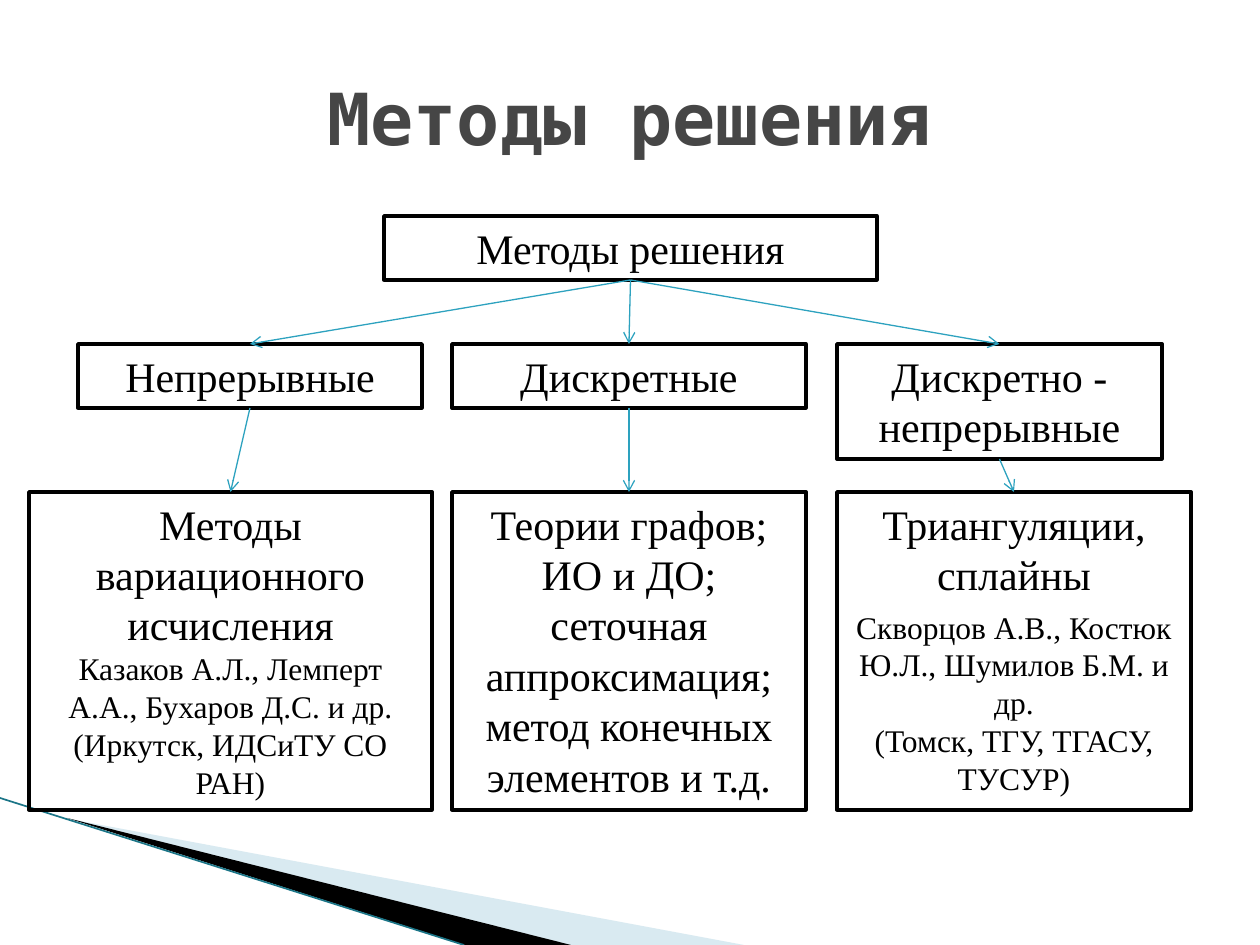
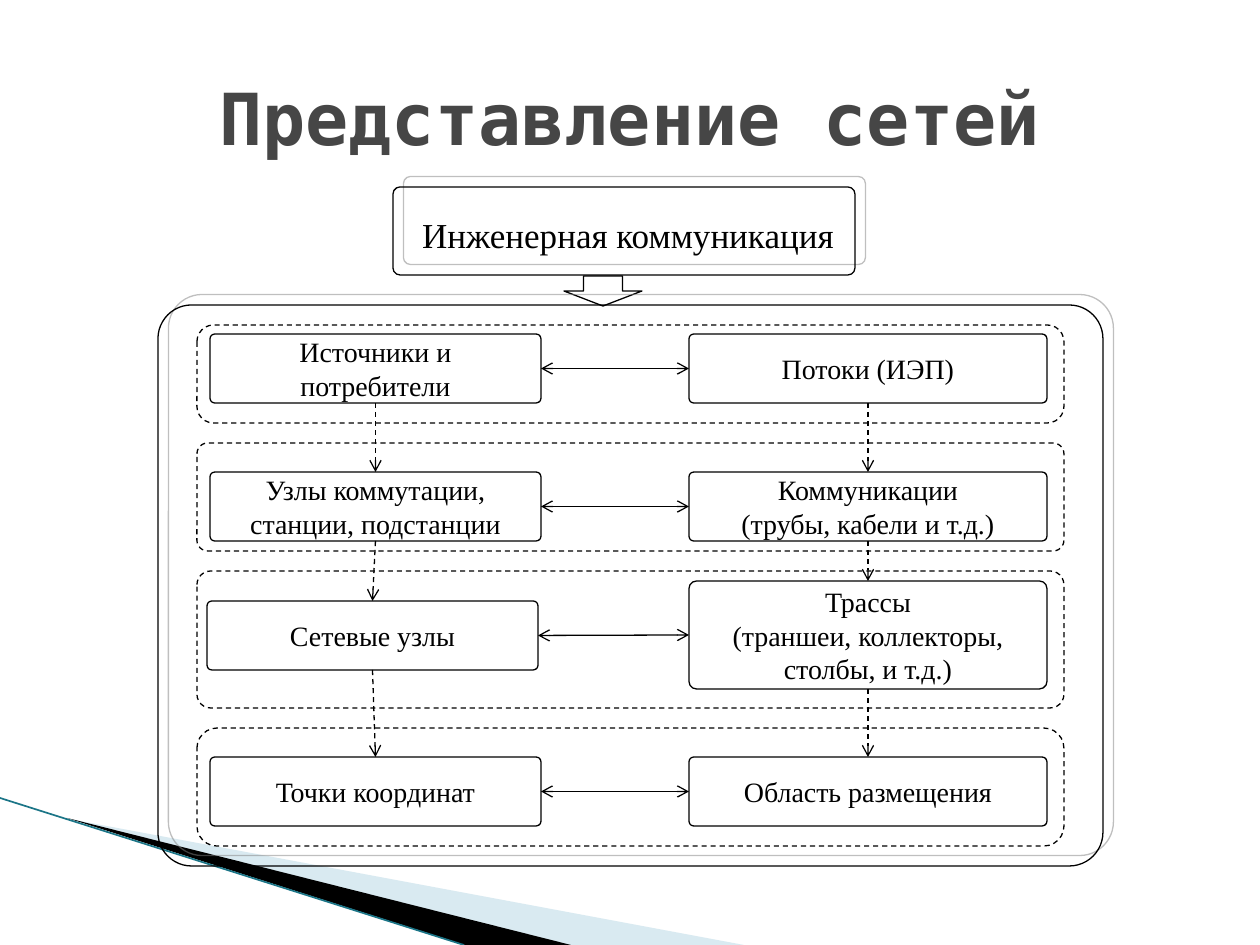
from lxml.etree import SubElement
from pptx import Presentation
from pptx.dml.color import RGBColor
from pptx.enum.dml import MSO_LINE
from pptx.enum.shapes import MSO_CONNECTOR, MSO_SHAPE
from pptx.enum.text import MSO_ANCHOR, PP_ALIGN
from pptx.oxml.ns import qn
from pptx.util import Pt

UNIT = 914400 / 126
WIDE, HIGH = 1260, 945
BLACK = RGBColor(0x00, 0x00, 0x00)
GRAY = RGBColor(0x46, 0x46, 0x46)
PALE = RGBColor(0xA0, 0xCB, 0xDC)
TEAL = RGBColor(0x1B, 0x75, 0x87)
CYAN = RGBColor(0x2D, 0xA2, 0xBF)
SERIF = "Times New Roman"
MONO = "DejaVu Sans Mono"
RECT = MSO_SHAPE.RECTANGLE
ROUND = MSO_SHAPE.ROUNDED_RECTANGLE
DOWN = MSO_SHAPE.DOWN_ARROW
STRAIGHT = MSO_CONNECTOR.STRAIGHT
DASH = MSO_LINE.DASH
TOP, MIDDLE = MSO_ANCHOR.TOP, MSO_ANCHOR.MIDDLE
CENTER = PP_ALIGN.CENTER
NORTH, WEST, SOUTH, EAST = range(4)

TREE = [
    ("Непрерывные", (49, 344, 64), (0, 403), [
        ("Методы вариационного исчисления", 24, 0),
        ("Казаков А.Л., Лемперт А.А., Бухаров Д.С. и др. "
         "(Иркутск, ИДСиТУ СО РАН)", 18, 0)]),
    ("Дискретные", (423, 354, 64), (423, 354), [
        ("Теории графов; ИО и ДО; сеточная аппроксимация;", 24, 0),
        ("метод конечных элементов и т.д.", 24, 0)]),
    ("Дискретно - непрерывные", (808, 325, 115), (808, 354), [
        ("Триангуляции, сплайны", 24, 0),
        ("Скворцов А.В., Костюк Ю.Л., Шумилов Б.М. и др.", 18, 5),
        ("(Томск, ТГУ, ТГАСУ, ТУСУР)", 18, 0)]),
]

LEVELS = [
    ((20, 98, 0.17), (52, 29), ["Источники и", "потребители"],
     (29, 69), ["Потоки (ИЭП)"]),
    ((138, 108, 0.1), (52, 167), ["Узлы коммутации,", "станции, подстанции"],
     (167, 69), ["Коммуникации", "(трубы, кабели и т.д.)"]),
    ((266, 137, 0.1), (49, 296), ["Сетевые узлы"],
     (276, 108), ["Трассы", "(траншеи, коллекторы,", "столбы, и т.д.)"]),
    ((423, 118, 0.17), (52, 452), ["Точки координат"],
     (452, 69), ["Область размещения"]),
]


def px(*vals):
    return [round(val * UNIT) for val in vals]


def write(shape, lines, font=SERIF, color=BLACK, bold=False,
          anchor=MIDDLE, wrap=True):
    frame = shape.text_frame
    frame.word_wrap = wrap
    frame.vertical_anchor = anchor
    for i, (text, size, gap) in enumerate(lines):
        para = frame.add_paragraph() if i else frame.paragraphs[0]
        para.text = text
        para.alignment = CENTER
        if gap:
            para.space_before = Pt(gap)
        para.font.name = font
        para.font.size = Pt(size)
        para.font.bold = bold
        para.font.color.rgb = color


def outline(slide, kind, box, width=0.75, curve=None, dash=None):
    shape = slide.shapes.add_shape(kind, *px(*box))
    shape.shadow.inherit = False
    shape.fill.background()
    shape.line.color.rgb = BLACK
    shape.line.width = Pt(width)
    if dash:
        shape.line.dash_style = dash
    if curve:
        shape.adjustments[0] = curve
    return shape


def cast(shape):
    effects = shape._element.spPr.find(qn("a:effectLst"))
    shade = SubElement(effects, qn("a:outerShdw"), dist="107763",
                       dir="18900000", algn="ctr", rotWithShape="0")
    color = SubElement(shade, qn("a:srgbClr"), val="808080")
    SubElement(color, qn("a:alpha"), val="50000")


def stroke(slide, ends, color, width):
    line = slide.shapes.add_connector(STRAIGHT, *px(*ends))
    line.line.color.rgb = color
    line.line.width = Pt(width)
    SubElement(line._element.spPr, qn("a:effectLst"))
    return line


def link(slide, start, side, end, into, color=BLACK, dash=None, both=False):
    line = stroke(slide, (0, 0, 0, 0), color, 0.75)
    line.begin_connect(start, side)
    line.end_connect(end, into)
    if dash:
        line.line.dash_style = dash
    tips = line._element.spPr.find(qn("a:ln"))
    if both:
        SubElement(tips, qn("a:headEnd"), type="arrow")
    SubElement(tips, qn("a:tailEnd"), type="arrow")


def wedge(slide, points, color):
    pen = slide.shapes.build_freeform(*points[0], scale=UNIT)
    pen.add_line_segments(points[1:], close=True)
    shape = pen.convert_to_shape()
    shape.shadow.inherit = False
    shape.fill.solid()
    shape.fill.fore_color.rgb = color
    shape.line.fill.background()
    return shape


def corner(slide, x, y):
    base = y + 147
    pale = wedge(slide, [(x + 69, y + 21), (x + 744, base), (x + 570, base)],
                 PALE)
    tint = pale._element.spPr.find(qn("a:solidFill"))[0]
    SubElement(tint, qn("a:alpha"), val="40000")
    wedge(slide, [(x + 67, y + 20), (x + 571, base), (x + 465, base)], BLACK)
    stroke(slide, (x, y, x + 464, base), TEAL, 0.95)


def page(deck, title):
    slide = deck.slides.add_slide(deck.slide_layouts[6])
    corner(slide, 0, 798)
    head = slide.shapes.add_textbox(*px(63, 38, 1134, 158))
    write(head, [(title, 41, 0)], MONO, GRAY, True)
    return slide


def tree(slide, x, y):
    def node(box, lines):
        shape = outline(slide, RECT, box, 2)
        write(shape, lines, anchor=TOP)
        return shape

    root = node((x + 355, y, 493, 64), [("Методы решения", 24, 0)])
    for name, (left, width, height), (start, span), lines in TREE:
        kind = node((x + left, y + 128, width, height), [(name, 24, 0)])
        leaf = node((x + start, y + 276, span, 318), lines)
        link(slide, root, SOUTH, kind, NORTH, CYAN)
        link(slide, kind, SOUTH, leaf, NORTH, CYAN)


def header(slide, x, y):
    cast(outline(slide, ROUND, (x, y, 462, 88), curve=0.08))
    label = slide.shapes.add_textbox(*px(x + 10, y + 20, 450, 55))
    write(label, [("Инженерная коммуникация", 20, 0)], anchor=TOP, wrap=False)
    outline(slide, DOWN, (x + 171, y + 89, 78, 30))


def levels(slide, x, y):
    def node(box, lines):
        shape = outline(slide, ROUND, box, curve=0.07)
        write(shape, [(line, 16, 0) for line in lines], wrap=False)
        return shape

    cast(outline(slide, ROUND, (x, y, 945, 561), curve=0.06))
    above = None
    for (top, height, curve), (left, low), names, (rise, tall), notes in LEVELS:
        outline(slide, ROUND, (x + 39, y + top, 867, height),
                curve=curve, dash=DASH)
        pair = (node((x + left, y + low, 331, 69), names),
                node((x + 531, y + rise, 358, tall), notes))
        link(slide, pair[1], WEST, pair[0], EAST, both=True)
        if above:
            for start, end in zip(above, pair):
                link(slide, start, SOUTH, end, NORTH, dash=DASH)
        above = pair


def main():
    deck = Presentation()
    deck.slide_width, deck.slide_height = px(WIDE, HIGH)
    tree(page(deck, "Методы решения"), 29, 216)
    scheme = page(deck, "Представление сетей")
    header(scheme, 393, 187)
    levels(scheme, 158, 305)
    deck.save("out.pptx")


if __name__ == "__main__":
    main()
